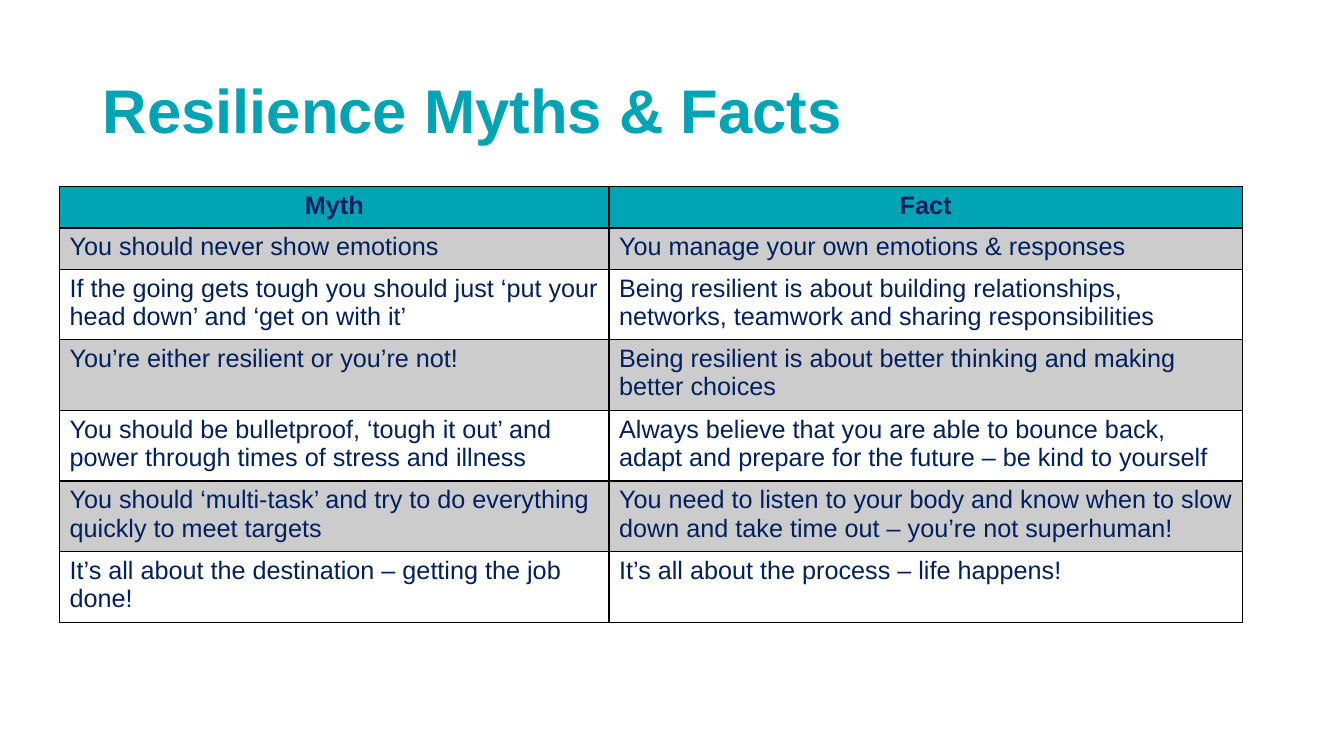
from dataclasses import dataclass

from lxml import etree
from pptx import Presentation
from pptx.dml.color import RGBColor
from pptx.enum.text import MSO_ANCHOR, PP_ALIGN
from pptx.oxml.ns import qn
from pptx.util import Inches, Pt

LEFT, CENTER = PP_ALIGN.LEFT, PP_ALIGN.CENTER
MIDDLE = MSO_ANCHOR.MIDDLE


@dataclass(frozen=True)
class Theme:
    font: str = "Arial"
    teal: str = "00A4B4"
    navy: str = "002060"
    black: str = "000000"
    band_opacity: int = 20
    title_size: int = 44
    table_size: int = 18
    thin_line: int = 1
    thick_line: int = 2


THEME = Theme()
SLIDE_WIDTH, SLIDE_HEIGHT = Inches(13.33), Inches(7.5)
TITLE_BOX = (0.069, 0.053, 0.658, 0.193)  # shares of the slide: left, top, width, height
TABLE_LEFT, TABLE_TOP = 0.0443, 0.2467
COLUMN_WIDTHS = (0.4089, 0.4711)
SINGLE_ROW, DOUBLE_ROW = 0.0547, 0.088
SINGLE_ROW_COUNT = 2

HEADINGS = ("Myth", "Fact")
MYTHS_AND_FACTS = (
    ("You should never show emotions",
     "You manage your own emotions & responses"),
    ("If the going gets tough you should just ‘put your head down’ and ‘get on with it’",
     "Being resilient is about building relationships, networks, teamwork and sharing responsibilities"),
    ("You’re either resilient or you’re not!",
     "Being resilient is about better thinking and making better choices"),
    ("You should be bulletproof, ‘tough it out’ and power through times of stress and illness",
     "Always believe that you are able to bounce back, adapt and prepare for the future – be kind to yourself"),
    ("You should ‘multi-task’ and try to do everything quickly to meet targets",
     "You need to listen to your body and know when to slow down and take time out – you’re not superhuman!"),
    ("It’s all about the destination – getting the job done!",
     "It’s all about the process – life happens!"),
)


def across(share):
    return round(SLIDE_WIDTH * share)


def down(share):
    return round(SLIDE_HEIGHT * share)


def write(text_frame, text, size, color, bold, alignment=LEFT):
    paragraph = text_frame.paragraphs[0]
    paragraph.alignment = alignment
    run = paragraph.add_run()
    run.text = text
    formats = {"name": THEME.font, "size": Pt(size), "bold": bold}
    for attribute, value in formats.items():
        setattr(run.font, attribute, value)
    run.font.color.rgb = RGBColor.from_string(color)
    return paragraph


def add_title(slide, text):
    left, top, width, height = TITLE_BOX
    box = slide.shapes.add_textbox(across(left), down(top), across(width), down(height))
    box.text_frame.word_wrap = True
    box.text_frame.vertical_anchor = MIDDLE
    paragraph = write(box.text_frame, text, THEME.title_size, THEME.teal, True)
    paragraph.line_spacing = 0.9


def draw_borders(cell, top, bottom):
    """Line all four sides; top and bottom are widths in points."""
    properties = cell._tc.get_or_add_tcPr()
    widths = {"lnL": THEME.thin_line, "lnR": THEME.thin_line, "lnT": top, "lnB": bottom}
    for side, width in widths.items():
        line = etree.SubElement(properties, qn(f"a:{side}"), w=str(Pt(width)))
        fill = etree.SubElement(line, qn("a:solidFill"))
        etree.SubElement(fill, qn("a:srgbClr"), val=THEME.black)


def fill_cell(cell, color, opacity=100):
    cell.fill.solid()
    cell.fill.fore_color.rgb = RGBColor.from_string(color)
    if opacity < 100:
        color_element = cell._tc.tcPr.find(f".//{qn('a:solidFill')}[last()]")
        color_element = cell._tc.tcPr.find(qn("a:solidFill")).find(qn("a:srgbClr"))
        etree.SubElement(color_element, qn("a:alpha"), val=str(opacity * 1000))


def format_cell(cell, text, row_index):
    is_heading = row_index == 0
    draw_borders(cell,
                 top=THEME.thick_line if row_index == 1 else THEME.thin_line,
                 bottom=THEME.thick_line if is_heading else THEME.thin_line)
    if is_heading:
        fill_cell(cell, THEME.teal)
    elif row_index % 2:
        fill_cell(cell, THEME.black, THEME.band_opacity)
    else:
        cell.fill.background()
    write(cell.text_frame, text, THEME.table_size, THEME.navy, is_heading,
          CENTER if is_heading else LEFT)


def add_table(slide, rows):
    heights = [SINGLE_ROW if index < SINGLE_ROW_COUNT else DOUBLE_ROW
               for index in range(len(rows))]
    table = slide.shapes.add_table(
        len(rows), len(COLUMN_WIDTHS), across(TABLE_LEFT), down(TABLE_TOP),
        across(sum(COLUMN_WIDTHS)), down(sum(heights))).table
    table.first_row = table.horz_banding = False
    for column, width in zip(table.columns, COLUMN_WIDTHS):
        column.width = across(width)
    for row_index, (row, height, texts) in enumerate(zip(table.rows, heights, rows)):
        row.height = down(height)
        for cell, text in zip(row.cells, texts):
            format_cell(cell, text, row_index)


def main():
    presentation = Presentation()
    presentation.slide_width, presentation.slide_height = SLIDE_WIDTH, SLIDE_HEIGHT
    slide = presentation.slides.add_slide(presentation.slide_layouts[6])
    add_title(slide, "Resilience Myths & Facts")
    add_table(slide, (HEADINGS, *MYTHS_AND_FACTS))
    presentation.save("out.pptx")


if __name__ == "__main__":
    main()
